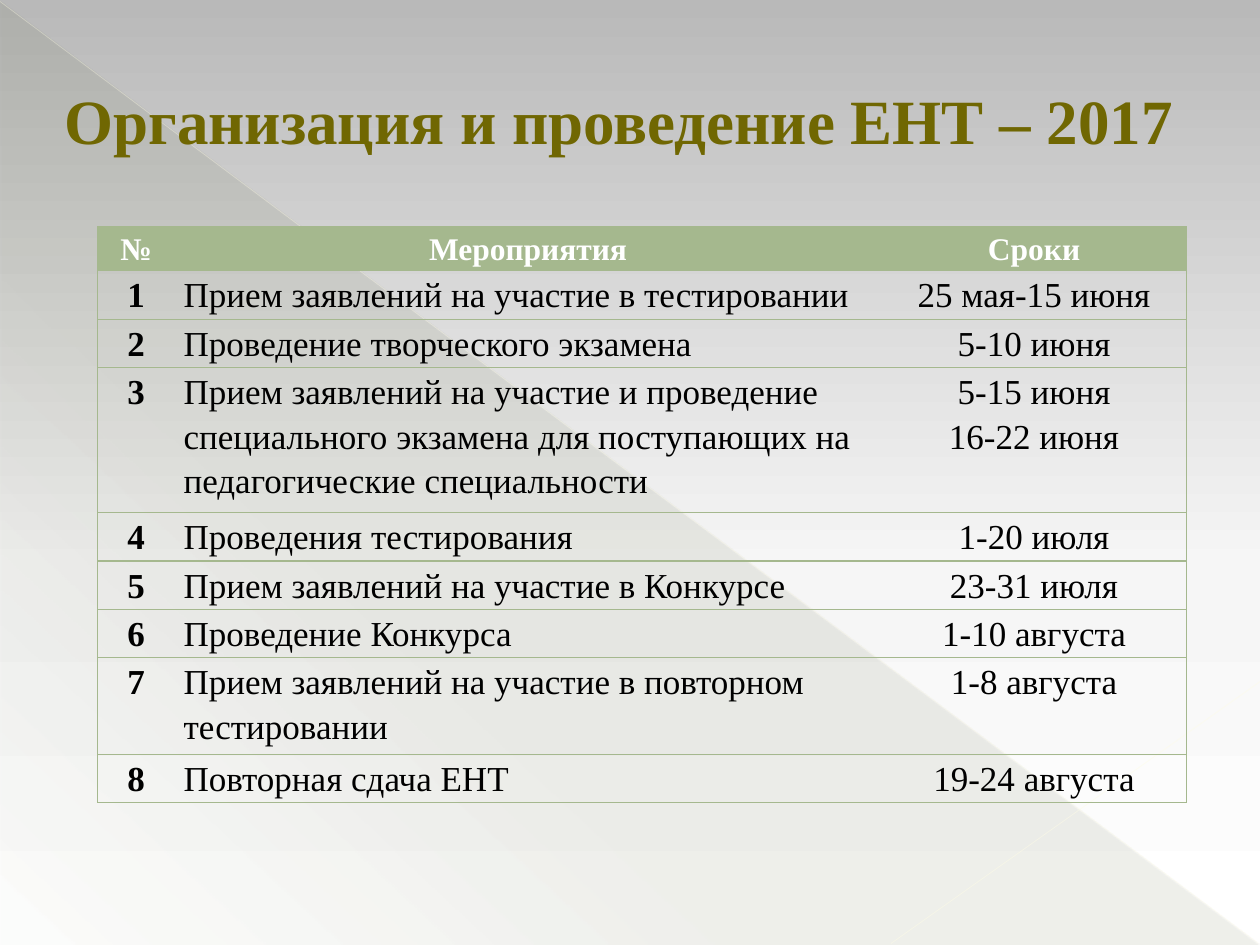
from dataclasses import dataclass

from pptx import Presentation
from pptx.dml.color import RGBColor as Rgb
from pptx.enum.shapes import MSO_CONNECTOR as Link, MSO_SHAPE as Shape
from pptx.enum.text import MSO_AUTO_SIZE as Fit, PP_ALIGN as Align
from pptx.oxml import parse_xml
from pptx.oxml.ns import nsdecls, qn
from pptx.util import Cm, Pt

FONT = "Times New Roman"
PLAIN = "{2D5ABB26-0587-4C30-8999-92F81FD0307C}"
HUES = {
    "title": "706702", "sage": "A5B88E", "white": "FFFFFF", "black": "000000",
    "olive": "444D26", "cream": "FFFDE3", "pale": "FFFDE6",
    "gray": "B9B9B9", "mist": "F6F6F6",
}


@dataclass
class Stop:
    pos: int
    hue: str
    alpha: int = 100


@dataclass
class Ray:
    x1: float
    y1: float
    x2: float
    y2: float
    hue: str
    width: float
    alpha: int


@dataclass
class Event:
    name: str
    dates: str
    height: float = 0.97


SKY = [Stop(0, "gray"), Stop(60, "mist"), Stop(100, "white")]
SHADE = [Stop(0, "olive", 10), Stop(70, "olive", 8), Stop(100, "olive", 1)]
RAYS = [
    Ray(0, 0.03, 25.37, 19.02, "cream", 0.39, 35),
    Ray(25.4, 13.74, 17.96, 19.02, "pale", 0.47, 45),
]
EVENTS = [
    Event("Прием заявлений на участие в тестировании", "25 мая-15 июня"),
    Event("Проведение творческого экзамена", "5-10 июня"),
    Event("Прием заявлений на участие и проведение специального экзамена "
          "для поступающих на педагогические специальности",
          "5-15 июня\n16-22 июня", 2.92),
    Event("Проведения тестирования", "1-20 июля"),
    Event("Прием заявлений на участие в Конкурсе", "23-31 июля"),
    Event("Проведение Конкурса", "1-10 августа"),
    Event("Прием заявлений на участие в повторном тестировании",
          "1-8 августа", 1.95),
    Event("Повторная сдача ЕНТ", "19-24 августа"),
]
HEAD = ["№", "Мероприятия", "Сроки"]
WIDTHS = [1.55, 14.25, 6.15]


def tint(hue: str) -> Rgb:
    return Rgb.from_string(HUES[hue])


def fade(owner, fill, stops: list[Stop], angle: int) -> None:
    fill.gradient()
    old = owner.find(".//" + qn("a:gradFill"))
    marks = "".join(
        f'<a:gs pos="{s.pos * 1000}"><a:srgbClr val="{HUES[s.hue]}">'
        f'<a:alpha val="{s.alpha * 1000}"/></a:srgbClr></a:gs>'
        for s in stops)
    new = parse_xml(
        f'<a:gradFill {nsdecls("a")} rotWithShape="1"><a:gsLst>{marks}</a:gsLst>'
        f'<a:lin ang="{angle * 60000}" scaled="0"/></a:gradFill>')
    old.getparent().replace(old, new)


def add_ray(slide, ray: Ray) -> None:
    line = slide.shapes.add_connector(
        Link.STRAIGHT, Cm(ray.x1), Cm(ray.y1), Cm(ray.x2), Cm(ray.y2))
    line.line.color.rgb = tint(ray.hue)
    line.line.width = Pt(ray.width)
    color = line.element.find(".//" + qn("a:srgbClr"))
    color.append(parse_xml(
        f'<a:alpha {nsdecls("a")} val="{ray.alpha * 1000}"/>'))
    line.element.spPr.append(parse_xml(f'<a:effectLst {nsdecls("a")}/>'))


def style(par, size: int, hue: str, bold: bool) -> None:
    font = par.font
    font.name, font.size, font.bold = FONT, Pt(size), bold
    font.color.rgb = tint(hue)


def add_title(slide, text: str) -> None:
    box = slide.shapes.add_textbox(Cm(0.89), Cm(1.52), Cm(24.1), Cm(1.8))
    frame = box.text_frame
    frame.word_wrap = True
    frame.auto_size = Fit.SHAPE_TO_FIT_TEXT
    frame.margin_left = Cm(0.41)
    frame.text = text
    style(frame.paragraphs[0], 36, "title", True)


def edge(cell, sides: str) -> None:
    props = cell._tc.get_or_add_tcPr()
    for side in sides:
        props.append(parse_xml(
            f'<a:ln{side} {nsdecls("a")} w="9525"><a:solidFill>'
            f'<a:srgbClr val="{HUES["sage"]}"/></a:solidFill></a:ln{side}>'))


def fill_cell(cell, text: str, row: int, col: int) -> None:
    top = row == 0
    cell.text = text
    cell.margin_left = cell.margin_right = Cm(0.18)
    cell.margin_top = cell.margin_bottom = 0
    for par in cell.text_frame.paragraphs:
        par.line_spacing = 1.15
        par.alignment = Align.LEFT if col == 1 and not top else Align.CENTER
        style(par, 18 if top else 20, "white" if top else "black",
              top or col == 0)
    edge(cell, ["LTB", "TB", "RTB"][col])
    if top:
        cell.fill.solid()
        cell.fill.fore_color.rgb = tint("sage")
    else:
        cell.fill.background()


def add_plan(slide) -> None:
    rows = [HEAD] + [[str(n), e.name, e.dates] for n, e in enumerate(EVENTS, 1)]
    highs = [0.89] + [e.height for e in EVENTS]
    frame = slide.shapes.add_table(
        len(rows), len(WIDTHS), Cm(1.97), Cm(4.57),
        Cm(sum(WIDTHS)), Cm(sum(highs)))
    table = frame.table
    table.first_row = table.horz_banding = False
    table._tbl.tblPr.find(qn("a:tableStyleId")).text = PLAIN
    for col, width in zip(table.columns, WIDTHS):
        col.width = Cm(width)
    for r, (texts, high) in enumerate(zip(rows, highs)):
        table.rows[r].height = Cm(high)
        for c, text in enumerate(texts):
            fill_cell(table.cell(r, c), text, r, c)


def main() -> None:
    deck = Presentation()
    deck.slide_width, deck.slide_height = Cm(25.4), Cm(19.05)
    slide = deck.slides.add_slide(deck.slide_layouts[6])
    fade(slide.element, slide.background.fill, SKY, 90)
    wedge = slide.shapes.add_shape(
        Shape.RIGHT_TRIANGLE, Cm(0.02), Cm(0.04), Cm(25.36), Cm(19))
    wedge.shadow.inherit = False
    wedge.line.fill.background()
    fade(wedge.element, wedge.fill, SHADE, 133)
    for ray in RAYS:
        add_ray(slide, ray)
    add_title(slide, "Организация и проведение ЕНТ – 2017")
    add_plan(slide)
    deck.save("out.pptx")


if __name__ == "__main__":
    main()
